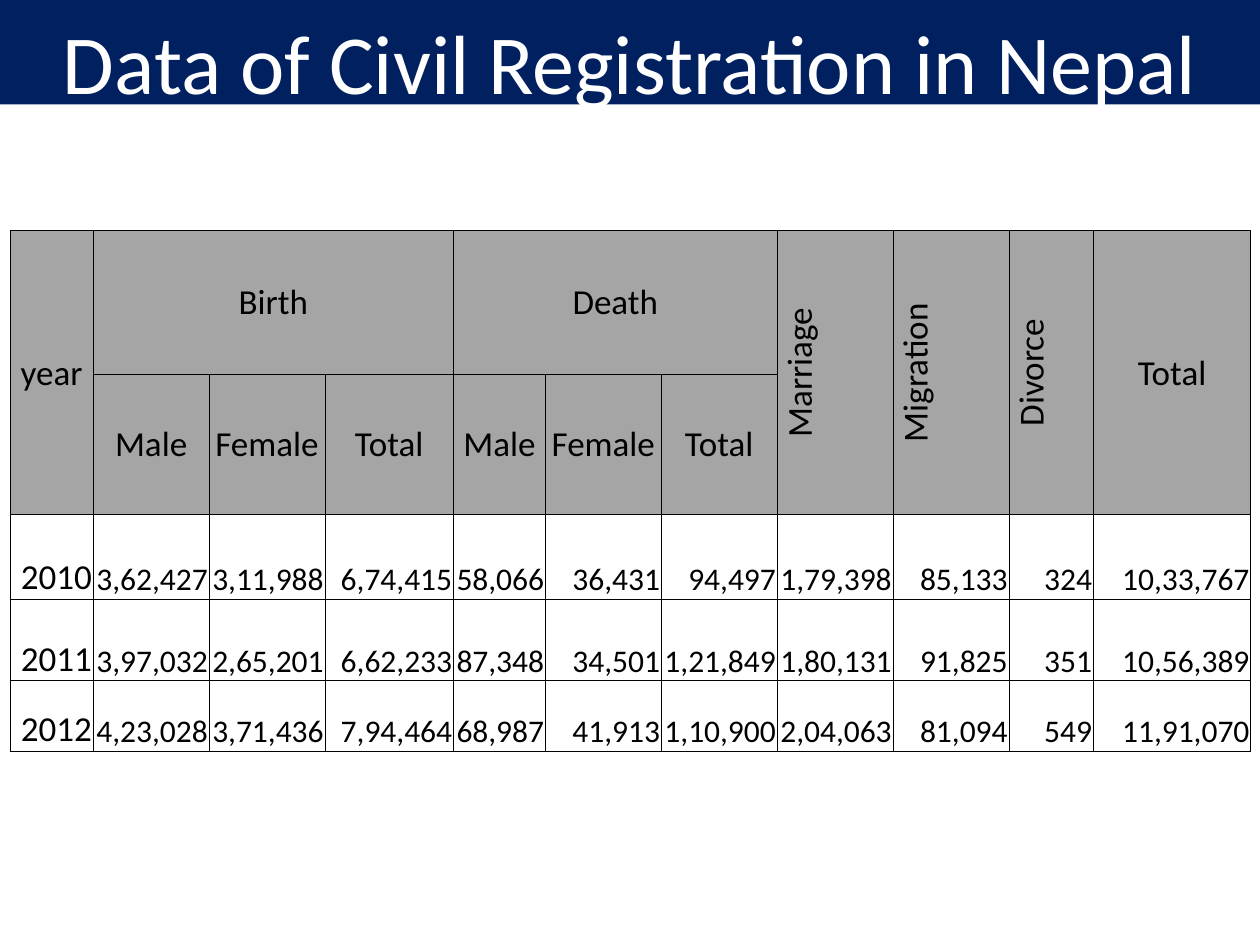
from typing import NamedTuple

from lxml import etree
from pptx import Presentation
from pptx.dml.color import RGBColor
from pptx.enum.shapes import MSO_SHAPE
from pptx.enum.text import MSO_ANCHOR, PP_ALIGN
from pptx.oxml.ns import qn
from pptx.util import Inches, Pt

RECTANGLE = MSO_SHAPE.RECTANGLE
TOP, MIDDLE, BOTTOM = MSO_ANCHOR.TOP, MSO_ANCHOR.MIDDLE, MSO_ANCHOR.BOTTOM
CENTER, RIGHT = PP_ALIGN.CENTER, PP_ALIGN.RIGHT

COLORS = {"navy": "002060", "header": "A5A5A5", "black": "000000", "white": "FFFFFF"}
FONT = "Calibri"
COLUMN_WIDTHS = [0.66, 0.92, 0.92, 1.02, 0.73, 0.92, 0.92, 0.92, 0.92, 0.67, 1.25]
ROW_HEIGHTS = [1.14, 0.69, 0.67, 0.65, 0.56]


class Header(NamedTuple):
    text: str
    row: int
    column: int
    row_span: int = 1
    column_span: int = 1
    vertical: bool = False


HEADERS = [
    Header("year", 0, 0, row_span=2),
    Header("Birth", 0, 1, column_span=3),
    Header("Death", 0, 4, column_span=3),
    Header("Marriage", 0, 7, row_span=2, vertical=True),
    Header("Migration", 0, 8, row_span=2, vertical=True),
    Header("Divorce", 0, 9, row_span=2, vertical=True),
    Header("Total", 0, 10, row_span=2),
    *(Header(text, 1, column) for column, text in enumerate(["Male", "Female", "Total"] * 2, 1)),
]
RECORDS = [
    ["2010", "3,62,427", "3,11,988", "6,74,415", "58,066", "36,431", "94,497",
     "1,79,398", "85,133", "324", "10,33,767"],
    ["2011", "3,97,032", "2,65,201", "6,62,233", "87,348", "34,501", "1,21,849",
     "1,80,131", "91,825", "351", "10,56,389"],
    ["2012", "4,23,028", "3,71,436", "7,94,464", "68,987", "41,913", "1,10,900",
     "2,04,063", "81,094", "549", "11,91,070"],
]


def rgb(name: str) -> RGBColor:
    return RGBColor.from_string(COLORS[name])


def write(frame, text: str, *, size: float, color: str = "black", align=CENTER) -> None:
    para = frame.paragraphs[0]
    para.alignment = align
    span = para.add_run()
    span.text = text
    span.font.name = FONT
    span.font.size = Pt(size)
    span.font.color.rgb = rgb(color)


def add_banner(page, text: str) -> None:
    box = page.shapes.add_shape(RECTANGLE, 0, 0, Inches(10), Inches(0.83))
    box.shadow.inherit = False
    box.fill.solid()
    box.fill.fore_color.rgb = rgb("navy")
    box.line.fill.background()
    frame = box.text_frame
    frame.word_wrap = True
    frame.vertical_anchor = TOP
    frame.margin_top, frame.margin_bottom = Inches(0.08), 0
    write(frame, text, size=48, color="white")


def add_borders(cell) -> None:
    properties = cell._tc.get_or_add_tcPr()
    for index, side in enumerate(("lnL", "lnR", "lnT", "lnB")):
        line = etree.Element(qn(f"a:{side}"), w=str(Pt(0.5)))
        fill = etree.SubElement(line, qn("a:solidFill"))
        etree.SubElement(fill, qn("a:srgbClr"), val=COLORS["black"])
        properties.insert(index, line)


def style_cell(cell, fill: str | None, anchor) -> None:
    cell.margin_left = cell.margin_right = cell.margin_top = Inches(0.01)
    cell.margin_bottom = 0
    cell.vertical_anchor = anchor
    if fill:
        cell.fill.solid()
        cell.fill.fore_color.rgb = rgb(fill)
    else:
        cell.fill.background()
    add_borders(cell)


def fill_header(table, header: Header) -> None:
    cell = table.cell(header.row, header.column)
    if header.row_span * header.column_span > 1:
        cell.merge(table.cell(header.row + header.row_span - 1,
                              header.column + header.column_span - 1))
    write(cell.text_frame, header.text, size=20)
    if header.vertical:
        cell._tc.get_or_add_tcPr().set("vert", "vert270")


def add_registration_table(page) -> None:
    table = page.shapes.add_table(
        len(ROW_HEIGHTS), len(COLUMN_WIDTHS), Inches(0.08), Inches(1.83),
        Inches(sum(COLUMN_WIDTHS)), Inches(sum(ROW_HEIGHTS))).table
    table.first_row = table.horz_banding = False
    for column, width in zip(table.columns, COLUMN_WIDTHS):
        column.width = Inches(width)
    for index, (row, height) in enumerate(zip(table.rows, ROW_HEIGHTS)):
        row.height = Inches(height)
        for cell in row.cells:
            style_cell(cell, *(("header", MIDDLE) if index < 2 else (None, BOTTOM)))
    for header in HEADERS:
        fill_header(table, header)
    for row_index, record in enumerate(RECORDS, 2):
        for column_index, text in enumerate(record):
            write(table.cell(row_index, column_index).text_frame, text,
                  size=18 if column_index else 20, align=RIGHT)


def main() -> None:
    """Build the civil registration slide."""
    deck = Presentation()
    deck.slide_width, deck.slide_height = Inches(10), Inches(7.5)
    page = deck.slides.add_slide(deck.slide_layouts[6])
    add_banner(page, "Data of Civil Registration in Nepal")
    add_registration_table(page)
    deck.save("out.pptx")


if __name__ == "__main__":
    main()
